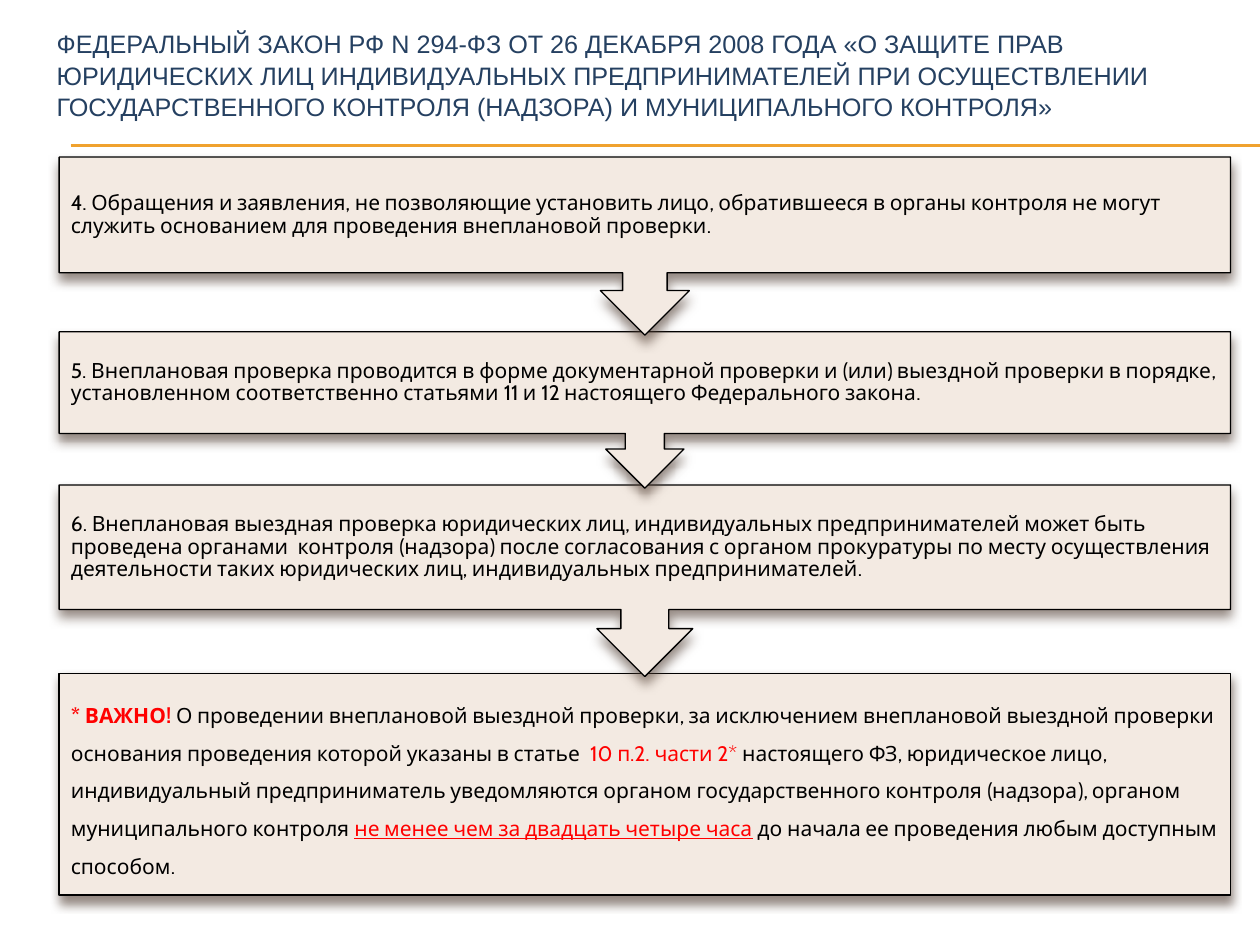
from lxml.etree import SubElement
from pptx import Presentation
from pptx.dml.color import RGBColor
from pptx.enum.shapes import MSO_CONNECTOR as Connector, MSO_SHAPE as Shape
from pptx.enum.text import MSO_ANCHOR as Anchor, MSO_AUTO_SIZE as AutoSize, PP_ALIGN as Align
from pptx.oxml.ns import qn
from pptx.util import Pt

THEME = {
    "title_font": "Arial", "title_size": 14.4, "title": "254061",
    "body_font": "Cabin", "body_size": 12, "text": "000000", "accent": "FF0000",
    "fill": "F3EAE2", "outline": "000000", "rule": "F0A22E", "shadow": "4E3B30",
    "line_width": 0.75,
}

TITLE = ("ФЕДЕРАЛЬНЫЙ ЗАКОН РФ N 294-ФЗ ОТ 26 ДЕКАБРЯ 2008 ГОДА «О ЗАЩИТЕ ПРАВ "
         "ЮРИДИЧЕСКИХ ЛИЦ ИНДИВИДУАЛЬНЫХ ПРЕДПРИНИМАТЕЛЕЙ ПРИ ОСУЩЕСТВЛЕНИИ "
         "ГОСУДАРСТВЕННОГО КОНТРОЛЯ (НАДЗОРА) И МУНИЦИПАЛЬНОГО КОНТРОЛЯ»")

STEPS = [
    (101.7, "4. Обращения и заявления, не позволяющие установить лицо, обратившееся в органы "
            "контроля не могут служить основанием для проведения внеплановой проверки."),
    (89.4, "5. Внеплановая проверка проводится в форме документарной проверки и (или) выездной "
           "проверки в порядке, установленном соответственно статьями 11 и 12 настоящего "
           "Федерального закона."),
    (109.5, "6. Внеплановая выездная проверка юридических лиц, индивидуальных предпринимателей "
            "может быть проведена органами  контроля (надзора) после согласования с органом "
            "прокуратуры по месту осуществления деятельности таких юридических лиц, "
            "индивидуальных предпринимателей."),
]

NOTICE_HEIGHT = 126.8
NOTICE = [
    ("* ВАЖНО! ", "accent", True, False),
    ("О проведении внеплановой выездной проверки, за исключением внеплановой выездной проверки "
     "основания проведения которой указаны в статье  ", "text", False, False),
    ("10 п.2. части 2* ", "accent", False, False),
    ("настоящего ФЗ, юридическое лицо, индивидуальный предприниматель уведомляются органом "
     "государственного контроля (надзора), органом муниципального контроля ",
     "text", False, False),
    ("не менее чем за двадцать четыре часа", "accent", False, True),
    (" до начала ее проведения любым доступным способом.", "text", False, False),
]

SLIDE_WIDTH, SLIDE_HEIGHT = 720, 540
RULE_LEFT, RULE_TOPS = 40.32, (82.8, 83.52)
BOX_LEFT, BOX_WIDTH, FIRST_TOP, OVERLAP = 33.8, 669.4, 89.8, 1.9
INSET = 6.72


def color(name):
    return RGBColor.from_string(THEME[name])


def add_rule(slide, top):
    rule = slide.shapes.add_connector(
        Connector.STRAIGHT, Pt(RULE_LEFT), Pt(top), Pt(SLIDE_WIDTH), Pt(top))
    rule.line.color.rgb = color("rule")
    rule.line.width = Pt(THEME["line_width"])
    SubElement(rule._element.spPr, qn("a:effectLst"))


def add_shadow(shape):
    shape.shadow.inherit = False
    effects = shape._element.spPr.find(qn("a:effectLst"))
    shadow = SubElement(effects, qn("a:outerShdw"), blurRad=str(Pt(6)), dist=str(Pt(4)),
                        dir="5400000", rotWithShape="0")
    shade = SubElement(shadow, qn("a:srgbClr"), val=THEME["shadow"])
    SubElement(shade, qn("a:alpha"), val="60000")


def add_box(slide, kind, top, height, runs, line_spacing, space_after):
    shape = slide.shapes.add_shape(kind, Pt(BOX_LEFT), Pt(top), Pt(BOX_WIDTH), Pt(height))
    shape.fill.solid()
    shape.fill.fore_color.rgb = color("fill")
    shape.line.color.rgb = color("outline")
    shape.line.width = Pt(THEME["line_width"])
    add_shadow(shape)
    frame = shape.text_frame
    frame.word_wrap = True
    frame.vertical_anchor = Anchor.MIDDLE
    frame.margin_left = frame.margin_right = frame.margin_top = frame.margin_bottom = Pt(INSET)
    paragraph = frame.paragraphs[0]
    paragraph.alignment = Align.LEFT
    paragraph.line_spacing = line_spacing
    paragraph.space_after = Pt(space_after)
    paragraph.font.name = THEME["body_font"]
    paragraph.font.size = Pt(THEME["body_size"])
    for text, color_name, bold, underline in runs:
        run = paragraph.add_run()
        run.text = text
        run.font.color.rgb = color(color_name)
        run.font.bold = bold
        run.font.underline = underline


def format_title(title):
    title.left, title.top, title.width, title.height = Pt(25.2), Pt(9.4), Pt(684), Pt(66.2)
    frame = title.text_frame
    frame.text = TITLE
    frame.word_wrap = True
    frame.auto_size = AutoSize.NONE
    frame.vertical_anchor = Anchor.MIDDLE
    paragraph = frame.paragraphs[0]
    paragraph.alignment = Align.LEFT
    paragraph.line_spacing = 1.05
    paragraph.font.name = THEME["title_font"]
    paragraph.font.size = Pt(THEME["title_size"])
    paragraph.font.color.rgb = color("title")


def main():
    presentation = Presentation()
    presentation.slide_width, presentation.slide_height = Pt(SLIDE_WIDTH), Pt(SLIDE_HEIGHT)
    slide = presentation.slides.add_slide(presentation.slide_layouts[5])
    format_title(slide.shapes.title)
    for top in RULE_TOPS:
        add_rule(slide, top)

    top = FIRST_TOP
    boxes = []
    for height, text in STEPS:
        runs = [(text, "text", False, False)]
        boxes.append((Shape.DOWN_ARROW_CALLOUT, top, height, runs, 0.9, 4.2))
        top += height - OVERLAP
    boxes.append((Shape.RECTANGLE, top, NOTICE_HEIGHT, NOTICE, 1.5, 0))
    for box in reversed(boxes):
        add_box(slide, *box)

    presentation.save("out.pptx")


if __name__ == "__main__":
    main()
